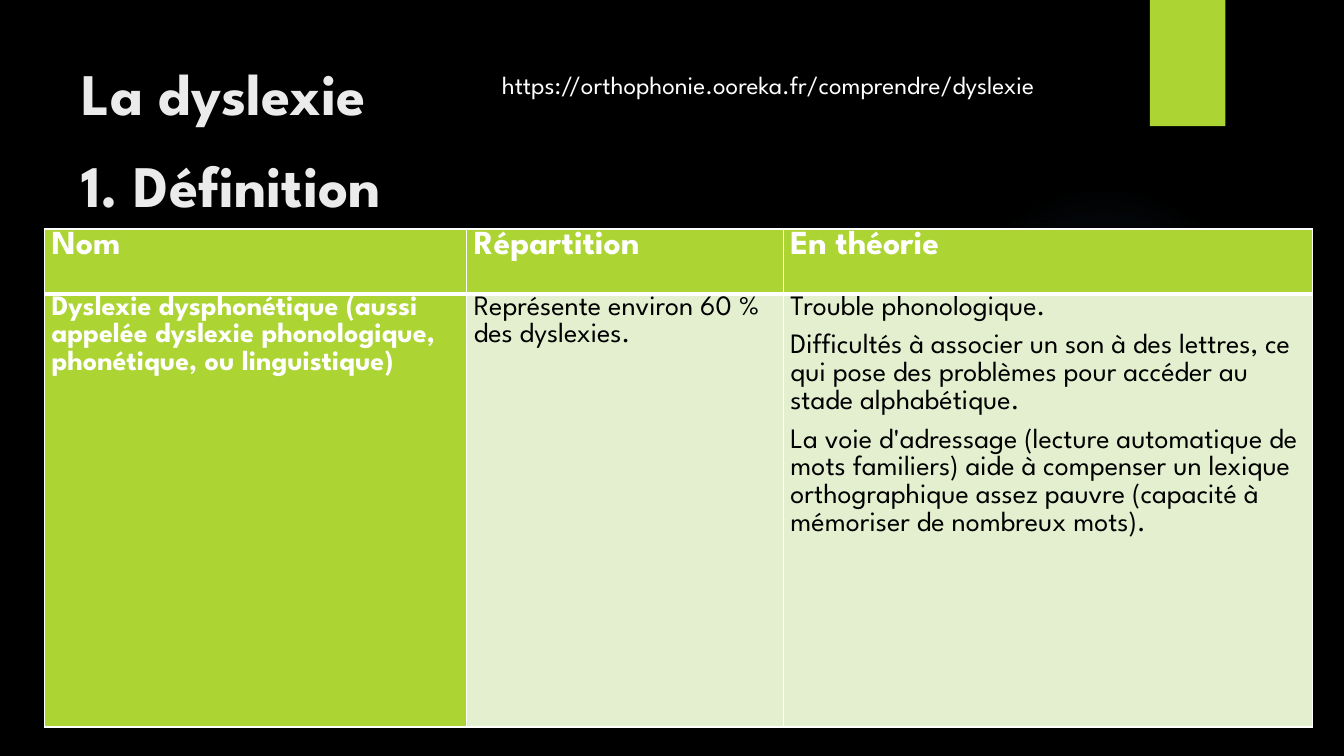
"""Builds the slide that defines dyslexia with a table of its types."""
from lxml.etree import SubElement
from pptx import Presentation
from pptx.dml.color import RGBColor
from pptx.enum.shapes import MSO_SHAPE as Shape
from pptx.enum.text import MSO_ANCHOR as Anchor
from pptx.oxml import parse_xml
from pptx.oxml.ns import nsdecls, qn
from pptx.util import Cm, Pt

GREEN, PALE, WHITE, BLACK = "ACD433", "E3EFCE", "FFFFFF", "000000"
GLOW = "7AC4F0"


def color(value):
    return RGBColor.from_string(value)


def apply(target, values):
    for name, value in values.items():
        setattr(target, name, value)


class SlideBuilder:
    def __init__(self, deck, font, background):
        self.font = font
        self.page = deck.slides.add_slide(deck.slide_layouts[6])
        fill = self.page.background.fill
        fill.solid()
        fill.fore_color.rgb = color(background)

    def fill_para(self, para, text, size, ink, bold=False):
        para.text = text
        for span in para.runs:
            apply(span.font, {"name": self.font, "size": Pt(size), "bold": bold})
            span.font.color.rgb = color(ink)

    def shape(self, kind, left, top, width, height, fill):
        shape = self.page.shapes.add_shape(kind, Cm(left), Cm(top), Cm(width), Cm(height))
        shape.shadow.inherit = False
        shape.line.fill.background()
        shape.fill.solid()
        shape.fill.fore_color.rgb = color(fill)
        return shape

    def glow(self, left, top, size, tint, stops):
        circle = self.shape(Shape.OVAL, left, top, size, size, tint)
        marks = "".join(
            f'<a:gs pos="{place * 1000}"><a:srgbClr val="{tint}">'
            f'<a:alpha val="{alpha * 1000}"/></a:srgbClr></a:gs>'
            for place, alpha in stops)
        gradient = parse_xml(
            f'<a:gradFill {nsdecls("a")}><a:gsLst>{marks}</a:gsLst><a:path path="circle">'
            '<a:fillToRect l="50000" t="50000" r="50000" b="50000"/></a:path></a:gradFill>')
        properties = circle.element.spPr
        properties.replace(properties.find(qn("a:solidFill")), gradient)

    def text(self, left, top, width, height, text, size, ink,
             bold=False, spacing=1.0, frame=None):
        box = self.page.shapes.add_textbox(Cm(left), Cm(top), Cm(width), Cm(height))
        apply(box.text_frame, frame or {})
        para = box.text_frame.paragraphs[0]
        self.fill_para(para, text, size, ink, bold)
        para.line_spacing = spacing

    def cell(self, cell, texts, size, ink, bold, fill, borders):
        apply(cell, {"margin_left": Cm(0.18), "margin_right": Cm(0.18),
                     "margin_top": 0, "margin_bottom": 0})
        properties = cell._tc.get_or_add_tcPr()
        for side, width in borders.items():
            line = SubElement(properties, qn(f"a:ln{side}"), w=str(Pt(width)))
            paint = SubElement(line, qn("a:solidFill"))
            SubElement(paint, qn("a:srgbClr"), val=WHITE)
        cell.fill.solid()
        cell.fill.fore_color.rgb = color(fill)
        frame = cell.text_frame
        for index, text in enumerate(texts):
            para = frame.add_paragraph() if index else frame.paragraphs[0]
            self.fill_para(para, text, size, ink, bold)
            apply(para, {"line_spacing": 1.07, "space_after": Pt(8)})

    def table(self, left, top, widths, heights, rows):
        table = self.page.shapes.add_table(
            len(heights), len(widths), Cm(left), Cm(top),
            Cm(sum(widths)), Cm(sum(heights))).table
        for column, width in zip(table.columns, widths):
            column.width = Cm(width)
        for row, height in zip(table.rows, heights):
            row.height = Cm(height)
        for r, row in enumerate(rows):
            header = r == 0
            borders = {"L": 1, "R": 1, "T": 1 if header else 3, "B": 3 if header else 1}
            for c, texts in enumerate(row):
                strong = header or c == 0
                self.cell(table.cell(r, c), texts, 24 if header else 20,
                          WHITE if strong else BLACK, strong,
                          GREEN if strong else PALE, borders)


def main():
    deck = Presentation()
    apply(deck, {"slide_width": Cm(33.87), "slide_height": Cm(19.05)})
    slide = SlideBuilder(deck, "League Spartan", BLACK)
    slide.glow(23.9, 4.65, 7.82, GLOW, [(0, 7), (36, 6), (69, 0), (100, 0)])
    slide.shape(Shape.RECTANGLE, 28.98, 0, 1.9, 3.18, GREEN)
    slide.text(1.8, 1.27, 26.14, 3.89, "La dyslexie\v1. Définition", 42, "EBEBEB",
               bold=True, spacing=1.3,
               frame={"word_wrap": True, "vertical_anchor": Anchor.MIDDLE})
    slide.table(1.12, 5.77, [10.64, 7.98, 13.33], [1.63, 10.92], [
        [["Nom"], ["Répartition"], ["En théorie"]],
        [["Dyslexie dysphonétique (aussi appelée dyslexie phonologique, "
          "phonétique, ou linguistique)"],
         ["Représente environ 60 % des dyslexies."],
         ["Trouble phonologique.",
          "Difficultés à associer un son à des lettres, ce qui pose des problèmes "
          "pour accéder au stade alphabétique.",
          "La voie d'adressage (lecture automatique de mots familiers) aide à compenser "
          "un lexique orthographique assez pauvre (capacité à mémoriser de nombreux mots)."]],
    ])
    slide.text(12.4, 1.63, 16.46, 1.02,
               "https://orthophonie.ooreka.fr/comprendre/dyslexie", 18, WHITE,
               frame={"word_wrap": True})
    deck.save("out.pptx")


if __name__ == "__main__":
    main()
